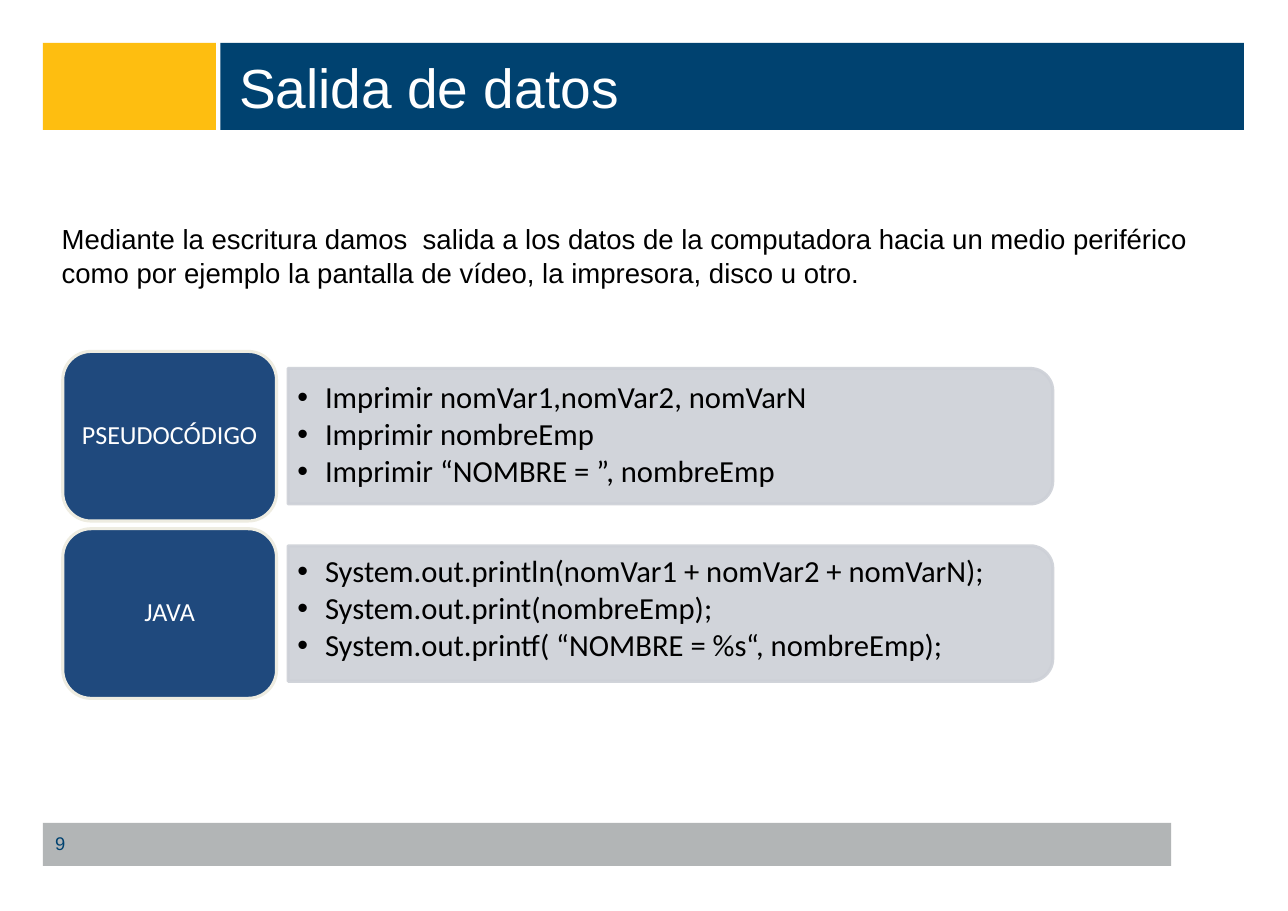
"""Build the slide on data output in pseudocode and Java."""
from lxml.etree import SubElement
from pptx import Presentation
from pptx.dml.color import RGBColor
from pptx.enum.shapes import MSO_SHAPE as SHAPE
from pptx.enum.text import MSO_ANCHOR as ANCHOR, MSO_AUTO_SIZE as FIT, PP_ALIGN as ALIGN
from pptx.oxml.ns import qn
from pptx.util import Pt

PX = 9144
NAVY, WHITE, BLACK, SILVER = "004270", "FFFFFF", "000000", "CDD0D7"
rgb = RGBColor.from_string

deck = Presentation()
deck.slide_width, deck.slide_height = 1169 * PX, 827 * PX
slide = deck.slides.add_slide(deck.slide_layouts[1])
shapes = slide.shapes


def block(kind, box, fill, line=None, opacity=100):
    """Add a filled preset shape, optionally outlined and translucent."""
    shape = shapes.add_shape(kind, *(n * PX for n in box))
    shape.shadow.inherit = False
    shape.fill.solid()
    shape.fill.fore_color.rgb = rgb(fill)
    if line:
        shape.line.color.rgb = rgb(line)
        shape.line.width = Pt(2)
    else:
        shape.line.fill.background()
    if opacity < 100:
        for color in shape.element.spPr.iter(qn("a:srgbClr")):
            SubElement(color, qn("a:alpha"), val=str(opacity * 1000))
    return shape


def write(shape, *lines, size, color, font="Arial", align=ALIGN.LEFT, anchor=ANCHOR.MIDDLE,
          margins=(11, 5), spacing=1, after=0, bullet=False, box=None):
    """Fill a shape with formatted paragraphs, placing it when a box is given."""
    if box:
        shape.left, shape.top, shape.width, shape.height = (n * PX for n in box)
    frame = shape.text_frame
    frame.word_wrap, frame.auto_size, frame.vertical_anchor = True, FIT.NONE, anchor
    frame.margin_left = frame.margin_right = margins[0] * PX
    frame.margin_top = frame.margin_bottom = margins[1] * PX
    frame.text = "\n".join(lines)
    for paragraph in frame.paragraphs:
        paragraph.alignment, paragraph.line_spacing = align, spacing
        paragraph.space_before, paragraph.space_after = Pt(0), Pt(after)
        props = paragraph._p.get_or_add_pPr()
        props.set("marL", str(25 * PX if bullet else 0))
        props.set("indent", str(-25 * PX if bullet else 0))
        if bullet:
            SubElement(props, qn("a:buFont"), typeface="Arial")
            SubElement(props, qn("a:buChar"), char="•")
        else:
            SubElement(props, qn("a:buNone"))
        for run in paragraph.runs:
            run.font.name, run.font.size = font, Pt(size)
            run.font.color.rgb = rgb(color)


for box, fill in (
    ((39, 39, 157, 79), "FEBE10"),
    ((200, 39, 929, 79), NAVY),
    ((39, 747, 1024, 39), "B2B5B6"),
):
    block(SHAPE.RECTANGLE, box, fill)

heading, intro = shapes.title, slide.placeholders[1]
shapes.element.append(heading.element)
write(heading, "Salida de datos", size=36, color=WHITE, box=(206, 39, 923, 79))
write(intro, "Mediante la escritura damos  salida a los datos de la computadora hacia un medio "
      "periférico como por ejemplo la pantalla de vídeo, la impresora, disco u otro.",
      size=18, color=BLACK, anchor=ANCHOR.TOP, margins=(11, 7), spacing=1.04,
      box=(45, 193, 1090, 79))

page_number = shapes.add_textbox(0, 0, 0, 0)
write(page_number, "9", size=12, color=NAVY, box=(39, 746, 273, 39))

notations = (
    ("PSEUDOCÓDIGO", ANCHOR.MIDDLE, (
        "Imprimir nomVar1,nomVar2, nomVarN",
        "Imprimir nombreEmp",
        "Imprimir “NOMBRE = ”, nombreEmp")),
    ("JAVA", ANCHOR.TOP, (
        "System.out.println(nomVar1 + nomVar2 + nomVarN);",
        "System.out.print(nombreEmp);",
        "System.out.printf( “NOMBRE = %s“, nombreEmp);")),
)
for row, (notation, anchor, statements) in enumerate(notations):
    top = 319 + 161 * row
    panel = block(SHAPE.ROUND_2_SAME_RECTANGLE, (547, top - 270, 123, 694),
                  SILVER, SILVER, opacity=90)
    panel.rotation = 90
    examples = shapes.add_textbox(0, 0, 0, 0)
    write(examples, *statements, size=20, color=BLACK, font="Calibri", anchor=anchor,
          margins=(8, 4), spacing=0.9, after=2.5, bullet=True, box=(262, top + 21, 688, 111))
    label = block(SHAPE.ROUNDED_RECTANGLE, (57, top, 194, 154), "1F497D", "EEECE1")
    write(label, notation, size=17, color=WHITE, font="Calibri", align=ALIGN.CENTER,
          margins=(7, 4), spacing=0.9)

deck.save("out.pptx")
